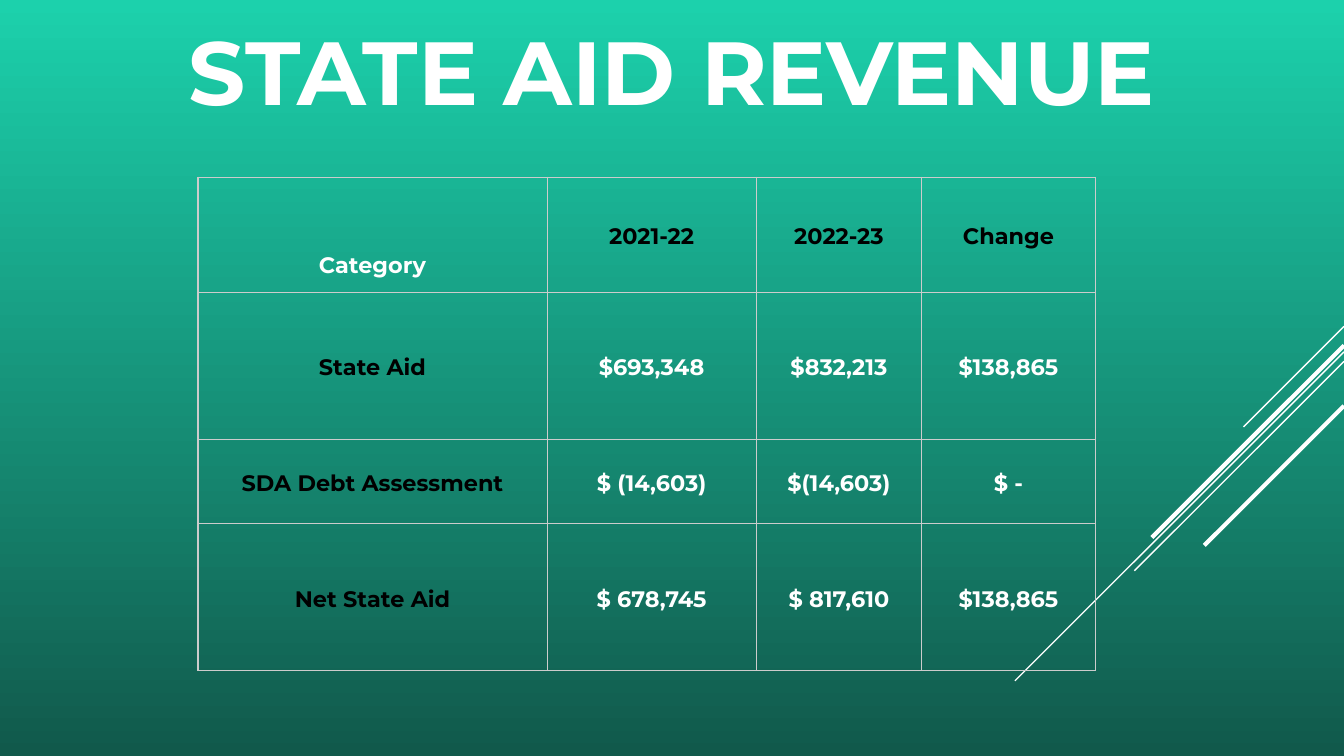
from lxml.etree import SubElement
from pptx import Presentation
from pptx.dml.color import RGBColor
from pptx.enum.shapes import MSO_CONNECTOR
from pptx.enum.text import MSO_ANCHOR, PP_ALIGN
from pptx.oxml.ns import qn
from pptx.util import Cm, Pt

WHITE = RGBColor(0xFF, 0xFF, 0xFF)
BLACK = RGBColor(0x00, 0x00, 0x00)
GRID = RGBColor(0xCC, 0xCC, 0xCC)
TEAL = RGBColor(0x1C, 0xD1, 0xAC)
DARK_TEAL = RGBColor(0x11, 0x59, 0x4B)
FONT = "Montserrat"


def style_paragraph(para, size, color, spacing):
    para.alignment = PP_ALIGN.CENTER
    para.line_spacing = spacing
    para.font.name = FONT
    para.font.size = Pt(size)
    para.font.bold = True
    para.font.color.rgb = color


def add_borders(cell):
    properties = cell._tc.get_or_add_tcPr()
    for side in ("a:lnL", "a:lnR", "a:lnT", "a:lnB"):
        border = SubElement(properties, qn(side), w=str(Pt(0.75)))
        fill = SubElement(border, qn("a:solidFill"))
        SubElement(fill, qn("a:srgbClr"), val=str(GRID))


deck = Presentation()
deck.slide_width = Cm(25.4)
deck.slide_height = Cm(14.29)
page = deck.slides.add_slide(deck.slide_layouts[6])

# Background: vertical gradient, light at the top
background = page.background.fill
background.gradient()
background.gradient_angle = 270
for stop, color, position in zip(background.gradient_stops, (TEAL, DARK_TEAL), (0, 1)):
    stop.color.rgb = color
    stop.position = position

# Diagonal lines at 45 degrees from the right edge: top, run, weight
for top, run, weight in [
    (6.17, 1.9, 0.75),
    (6.65, 6.22, 0.75),
    (6.83, 3.96, 0.75),
    (6.53, 3.63, 2.25),
    (7.67, 2.64, 2.25),
]:
    line = page.shapes.add_connector(
        MSO_CONNECTOR.STRAIGHT, Cm(25.4), Cm(top), Cm(25.4 - run), Cm(top + run)
    )
    line.line.color.rgb = WHITE
    line.line.width = Pt(weight)
    SubElement(line._element.spPr, qn("a:effectLst"))

# Title
box = page.shapes.add_textbox(Cm(3.3), Cm(0.71), Cm(18.8), Cm(1.65))
frame = box.text_frame
frame.word_wrap = True
frame.vertical_anchor = MSO_ANCHOR.BOTTOM
frame.margin_left = frame.margin_right = frame.margin_top = frame.margin_bottom = 0
frame.text = "STATE AID REVENUE"
style_paragraph(frame.paragraphs[0], 48, WHITE, 0.9)

# Revenue table
ROWS = [
    ("Category", "2021-22", "2022-23", "Change"),
    ("State Aid", "$693,348", "$832,213", "$138,865"),
    ("SDA Debt Assessment", "$ (14,603)", "$(14,603)", "$ -"),
    ("Net State Aid", "$ 678,745", "$ 817,610", "$138,865"),
]
WIDTHS = (6.6, 3.95, 3.13, 3.28)
HEIGHTS = (2.18, 2.77, 1.6, 2.77)

table = page.shapes.add_table(
    len(ROWS), len(WIDTHS), Cm(3.74), Cm(3.35), Cm(sum(WIDTHS)), Cm(sum(HEIGHTS))
).table
table.first_row = False
table.horz_banding = False
for column, width in zip(table.columns, WIDTHS):
    column.width = Cm(width)
for row, height in zip(table.rows, HEIGHTS):
    row.height = Cm(height)

for r, texts in enumerate(ROWS):
    for c, text in enumerate(texts):
        cell = table.cell(r, c)
        corner = r == 0 and c == 0
        heading = (r == 0 or c == 0) and not corner
        cell.text = text
        cell.vertical_anchor = MSO_ANCHOR.BOTTOM if corner else MSO_ANCHOR.MIDDLE
        cell.margin_left = cell.margin_right = Cm(0.08)
        cell.margin_top = cell.margin_bottom = Cm(0.25)
        style_paragraph(
            cell.text_frame.paragraphs[0],
            12,
            BLACK if heading else WHITE,
            1.0 if corner else 1.15,
        )
        add_borders(cell)
        cell.fill.background()

deck.save("out.pptx")
